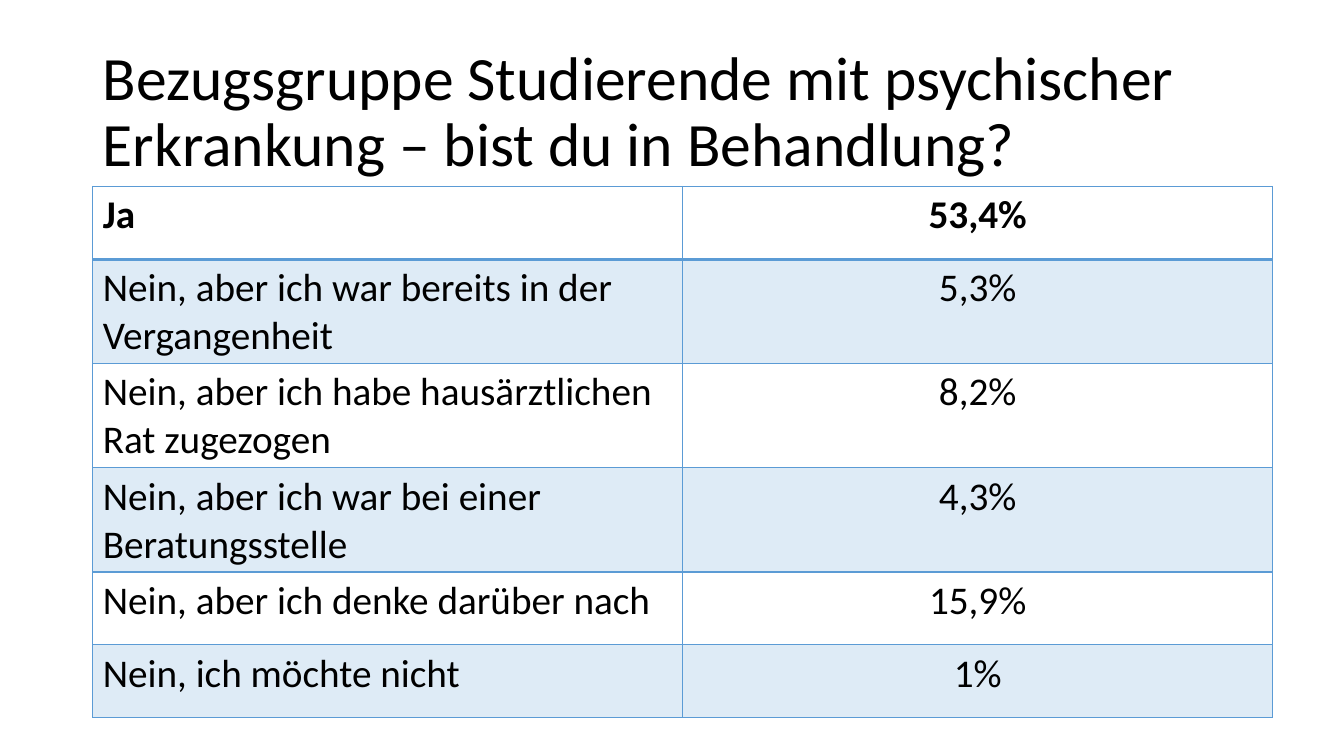
"""Build a slide with a title and a table of treatment answers."""
from lxml.etree import SubElement
from pptx import Presentation
from pptx.dml.color import RGBColor
from pptx.enum.text import MSO_ANCHOR, PP_ALIGN
from pptx.oxml.ns import qn
from pptx.util import Inches, Pt

WIDE, HIGH = Inches(13.33), Inches(7.5)
LEFT, TOP = 6.9, 24.67
COLORS = {"text": "000000", "blue": "5B9BD5"}
TITLE = "Bezugsgruppe Studierende mit psychischer Erkrankung – bist du in Behandlung?"
ROWS = [
    ("Ja", "53,4%"),
    ("Nein, aber ich war bereits in der Vergangenheit", "5,3%"),
    ("Nein, aber ich habe hausärztlichen Rat zugezogen", "8,2%"),
    ("Nein, aber ich war bei einer Beratungsstelle", "4,3%"),
    ("Nein, aber ich denke darüber nach", "15,9%"),
    ("Nein, ich möchte nicht", "1%"),
]


def place(left, top, width, height):
    """Turn percentages of the slide into lengths."""
    return [int(side * share / 100) for side, share in
            zip((WIDE, HIGH, WIDE, HIGH), (left, top, width, height))]


def write(frame, text, size=28, bold=False, align=PP_ALIGN.LEFT, space=1.0):
    """Put formatted text into a text frame."""
    para = frame.paragraphs[0]
    para.alignment, para.line_spacing = align, space
    run = para.add_run()
    run.text = text
    font = run.font
    font.name, font.size, font.bold = "Calibri", Pt(size), bold
    font.color.rgb = RGBColor.from_string(COLORS["text"])


def border(cell, under):
    """Draw the four borders of a cell, with the lower one of its own width."""
    props = cell._tc.get_or_add_tcPr()
    for side, width in zip("LRTB", (1, 1, 1, under)):
        line = SubElement(props, qn(f"a:ln{side}"), w=str(Pt(width)))
        fill = SubElement(line, qn("a:solidFill"))
        SubElement(fill, qn("a:srgbClr"), val=COLORS["blue"])


def shade(cell, tinted):
    """Fill a cell with a light tint or leave it clear."""
    if not tinted:
        cell.fill.background()
        return
    cell.fill.solid()
    cell.fill.fore_color.rgb = RGBColor.from_string(COLORS["blue"])
    color = cell._tc.tcPr.find(f"{qn('a:solidFill')}/{qn('a:srgbClr')}")
    SubElement(color, qn("a:alpha"), val="20000")


def add_title(slide):
    """Add the heading."""
    frame = slide.shapes.add_textbox(*place(LEFT, 5.33, 86.25, 19.33)).text_frame
    frame.word_wrap = True
    frame.vertical_anchor = MSO_ANCHOR.MIDDLE
    write(frame, TITLE, size=44, space=0.9)


def add_grid(slide):
    """Add the table of answers and shares."""
    area = place(LEFT, TOP, 87.8, 9.63 * len(ROWS))
    table = slide.shapes.add_table(len(ROWS), 2, *area).table
    table.first_row = table.horz_banding = False
    for row, texts in enumerate(ROWS):
        head = row == 0
        for col, text in enumerate(texts):
            cell = table.cell(row, col)
            align = PP_ALIGN.CENTER if col else PP_ALIGN.LEFT
            write(cell.text_frame, text, bold=head, align=align)
            border(cell, under=2 if head else 1)
            shade(cell, tinted=row % 2 == 1)


def main():
    """Build and save the slide."""
    deck = Presentation()
    deck.slide_width, deck.slide_height = WIDE, HIGH
    slide = deck.slides.add_slide(deck.slide_layouts[6])
    add_title(slide)
    add_grid(slide)
    deck.save("out.pptx")


if __name__ == "__main__":
    main()
